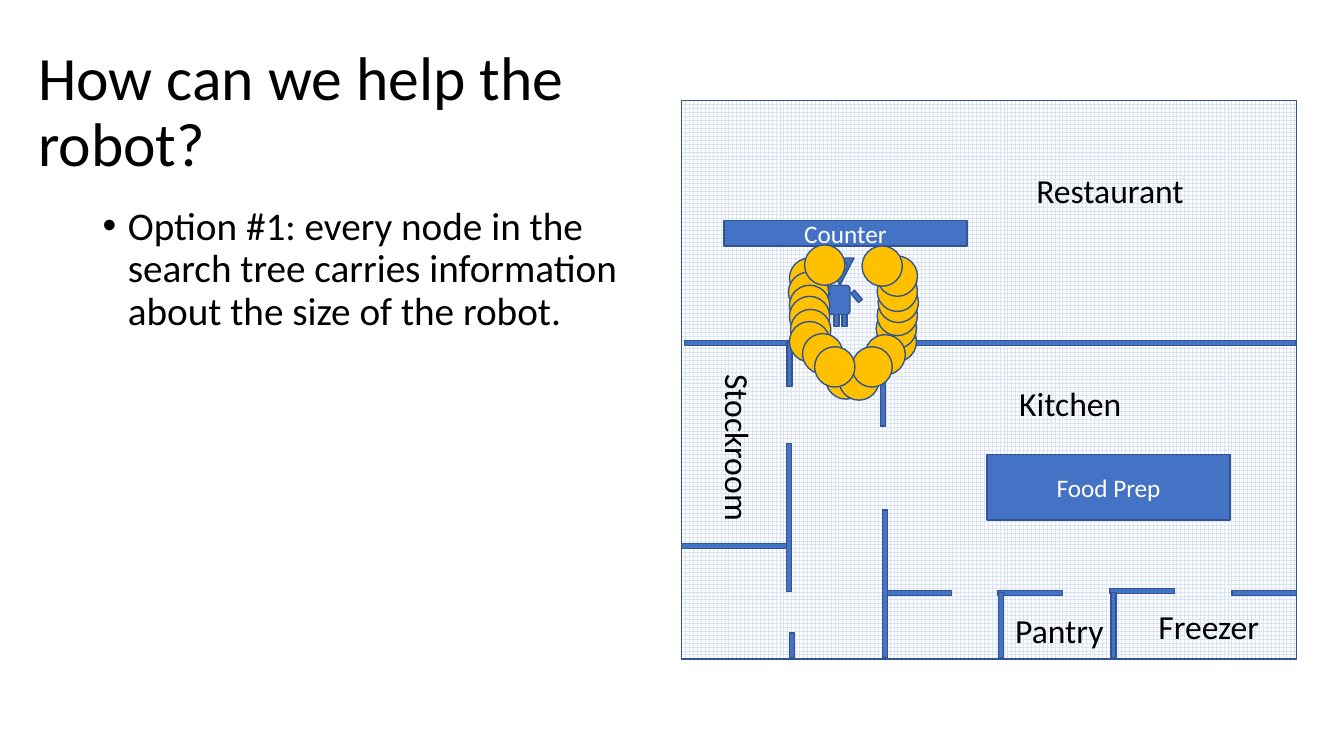
import pptx
import pptx.util
import pptx.dml.color
import pptx.enum.dml
import pptx.enum.shapes
import pptx.enum.text
import lxml.etree
from pptx.util import Inches

RGB = pptx.dml.color.RGBColor
BLUE = RGB(0x44, 0x72, 0xC4)
EDGE = RGB(0x32, 0x54, 0x91)
GOLD = RGB(0xFF, 0xC0, 0x00)
PALE = RGB(0xDA, 0xE3, 0xF3)
WHITE = RGB(0xFF, 0xFF, 0xFF)
BLACK = RGB(0, 0, 0)

KIND = pptx.enum.shapes.MSO_SHAPE
ANCHOR = pptx.enum.text.MSO_ANCHOR
FIT = pptx.enum.text.MSO_AUTO_SIZE
WALL = 0.05
DISC = 0.4

# Left, top, length, turn
WALLS = [
    (6.79, 3.38, 1.06, 0), (8.73, 3.38, 4.12, 0),
    (8.35, 3.79, 0.82, 90), (8.04, 5.77, 1.47, 90),
    (8.8, 5.86, 0.64, 0), (9.9, 5.86, 0.64, 0), (11.01, 5.84, 0.64, 0),
    (9.6, 6.18, 0.65, 90), (10.72, 6.18, 0.65, 90),
    (12.22, 5.86, 0.64, 0), (7.09, 5.11, 1.47, 90),
    (6.76, 5.39, 1.04, 0), (7.61, 3.59, 0.44, 90), (7.73, 6.38, 0.25, 90),
]

# Text, left, top, width, turn
ROOMS = [
    ("Kitchen", 10.01, 3.75, 1.23, 0),
    ("Restaurant", 10.18, 1.64, 1.68, 0),
    ("Freezer", 11.39, 5.96, 1.21, 0),
    ("Pantry", 9.97, 6, 1.09, 0),
    ("Stockroom", 6.49, 4.2, 1.67, 90),
]

# Left and top of each disc around the robot, back to front
DISCS = [
    (7.83, 2.56), (7.82, 2.7), (7.83, 2.83), (7.83, 2.94), (7.84, 3.07),
    (7.83, 3.19), (8.19, 3.56), (8.32, 3.57), (8.69, 3.19), (8.69, 3.06),
    (8.7, 2.93), (8.71, 2.8), (8.7, 2.69), (8.7, 2.54), (7.98, 2.43),
    (8.55, 2.44), (8.58, 3.32), (7.96, 3.31), (8.45, 3.44), (8.08, 3.44),
]


def add_part(shapes, kind, left, top, width, height, fill=BLUE, turn=0):
    part = shapes.add_shape(kind, Inches(left), Inches(top),
                            Inches(width), Inches(height))
    part.shadow.inherit = False
    part.rotation = turn
    part.fill.solid()
    part.fill.fore_color.rgb = fill
    part.line.color.rgb = EDGE
    part.line.width = pptx.util.Pt(1)
    return part


def set_text(frame, text, size, color):
    para = frame.paragraphs[0]
    para.text = text
    para.font.name = "Calibri"
    para.font.size = pptx.util.Pt(size)
    para.font.color.rgb = color
    return para


def add_desk(shapes, text, left, top, height):
    desk = add_part(shapes, KIND.RECTANGLE, left, top, 2.41, height)
    desk.text_frame.vertical_anchor = ANCHOR.MIDDLE
    para = set_text(desk.text_frame, text, 18, WHITE)
    para.alignment = pptx.enum.text.PP_ALIGN.CENTER


def add_room(shapes, text, left, top, width, turn):
    box = shapes.add_textbox(Inches(left), Inches(top),
                             Inches(width), Inches(0.5))
    box.rotation = turn
    box.text_frame.word_wrap = False
    box.text_frame.auto_size = FIT.SHAPE_TO_FIT_TEXT
    set_text(box.text_frame, text, 24, BLACK)


def add_block(shapes, text, left, top, width, height, size, anchor):
    box = shapes.add_textbox(Inches(left), Inches(top),
                             Inches(width), Inches(height))
    box.text_frame.word_wrap = True
    box.text_frame.vertical_anchor = anchor
    para = set_text(box.text_frame, text, size, BLACK)
    para.line_spacing = 0.9
    return para


def add_bullet(para):
    para.space_before = pptx.util.Pt(10)
    props = para._p.get_or_add_pPr()
    props.set("marL", str(Inches(0.25)))
    props.set("indent", str(Inches(-0.25)))
    font = pptx.oxml.parse_xml(
        '<a:buFont xmlns:a="http://schemas.openxmlformats.org/'
        'drawingml/2006/main" typeface="Arial"/>')
    mark = lxml.etree.Element(font.tag.replace("buFont", "buChar"), char="•")
    # Bullet marks stand after the spacing and before the font
    spot = props.index(props.find(font.tag.replace("buFont", "spcBef"))) + 1
    props.insert(spot, font)
    props.insert(spot + 1, mark)


def add_robot(shapes):
    robot = shapes.add_group_shape().shapes
    # Head and eyes
    add_part(robot, KIND.ISOSCELES_TRIANGLE, 8.19, 2.56, 0.28, 0.27, turn=180)
    for left in (8.25, 8.32):
        add_part(robot, KIND.OVAL, left, 2.59, 0.08, 0.09, GOLD)
    # Body
    add_part(robot, KIND.ROUNDED_RECTANGLE, 8.22, 2.83, 0.21, 0.29)
    # Legs, then arms
    for left, top, turn in ((8.27, 3.12, 0), (8.35, 3.12, 0),
                            (8.47, 2.88, 319.4), (8.16, 2.89, 24.9)):
        add_part(robot, KIND.RECTANGLE, left, top, 0.05, 0.12, turn=turn)


def main():
    deck = pptx.Presentation()
    deck.slide_width = Inches(13.33)
    deck.slide_height = Inches(7.5)
    shapes = deck.slides.add_slide(deck.slide_layouts[6]).shapes

    # Floor with its grid
    floor = add_part(shapes, KIND.RECTANGLE, 6.76, 1, 6.1, 5.54)
    floor.fill.patterned()
    floor.fill.pattern = pptx.enum.dml.MSO_PATTERN.LARGE_GRID
    floor.fill.fore_color.rgb = PALE
    floor.fill.back_color.rgb = WHITE

    # Robot, desks, walls and room names
    add_robot(shapes)
    add_desk(shapes, "Counter", 7.18, 2.19, 0.25)
    for left, top, length, turn in WALLS:
        add_part(shapes, KIND.RECTANGLE, left, top, length, WALL, turn=turn)
    add_desk(shapes, "Food Prep", 9.79, 4.51, 0.65)
    for room in ROOMS:
        add_room(shapes, *room)

    # Ring of discs
    for left, top in DISCS:
        add_part(shapes, KIND.OVAL, left, top, DISC, DISC, GOLD)

    # Title and bullet
    add_block(shapes, "How can we help the robot?",
              0.28, 0.4, 6.3, 1.45, 44, ANCHOR.MIDDLE)
    para = add_block(shapes, "Option #1: every node in the search tree "
                     "carries information about the size of the robot.",
                     0.92, 2, 5.67, 4.76, 28, ANCHOR.TOP)
    add_bullet(para)

    deck.save("out.pptx")


if __name__ == "__main__":
    main()
